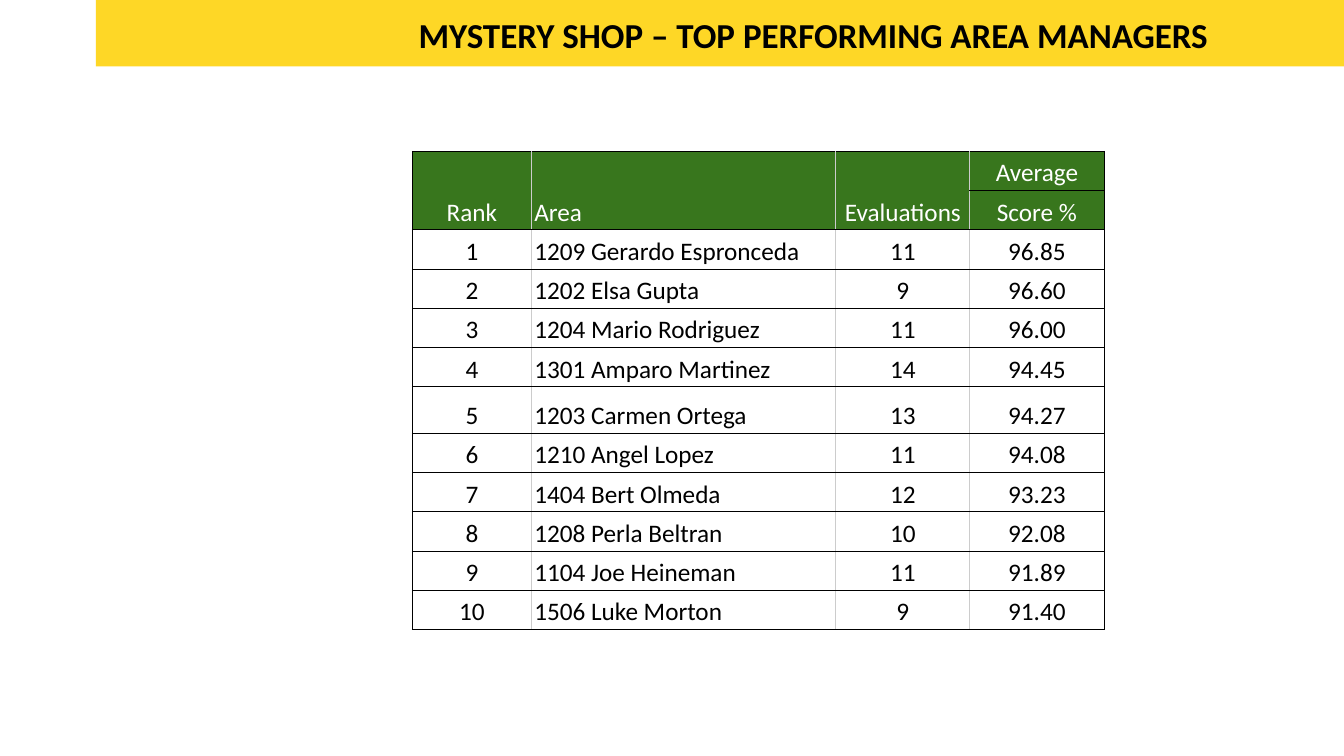
from lxml import etree
from pptx import Presentation, util as u
from pptx.dml.color import RGBColor
from pptx.enum import shapes, text
from pptx.oxml.ns import qn

# Content
TITLE = "MYSTERY SHOP – TOP PERFORMING AREA MANAGERS"
ROWS = [
    ("Rank", "Area", "Evaluations", "Average"),
    ("", "", "", "Score %"),
    ("1", "1209 Gerardo Espronceda", "11", "96.85"),
    ("2", "1202 Elsa Gupta", "9", "96.60"),
    ("3", "1204 Mario Rodriguez", "11", "96.00"),
    ("4", "1301 Amparo Martinez", "14", "94.45"),
    ("5", "1203 Carmen Ortega", "13", "94.27"),
    ("6", "1210 Angel Lopez", "11", "94.08"),
    ("7", "1404 Bert Olmeda", "12", "93.23"),
    ("8", "1208 Perla Beltran", "10", "92.08"),
    ("9", "1104 Joe Heineman", "11", "91.89"),
    ("10", "1506 Luke Morton", "9", "91.40"),
]
COLORS = {"band": "FED726", "header": "38761D", "body": "FFFFFF",
          "light": "FFFFFF", "dark": "000000", "grid": "CCCCCC"}
FONT = "Calibri"
HEADER_ROWS = 2
AREA_COL = 1
COL_WIDTHS = [1.18, 3.02, 1.33, 1.33]
ROW_H, TALL_ROW, TALL_ROW_H = 0.39, 6, 0.46
TABLE_LEFT, TABLE_TOP = 4.09, 1.5


def rgb(name):
    return RGBColor.from_string(COLORS[name])


def style(p, size, color, align, spacing, bold=False):
    p.alignment, p.line_spacing = align, spacing
    p.font.name, p.font.size, p.font.bold = FONT, u.Pt(size), bold
    p.font.color.rgb = rgb(color)


def set_borders(cell, **sides):
    """Put the lines ahead of the fill, as the schema requires."""
    tc_pr = cell._tc.get_or_add_tcPr()
    for i, (side, color) in enumerate(sides.items()):
        ln = etree.Element(qn(f"a:ln{side}"), w=str(u.Pt(0.75)))
        fill = etree.SubElement(ln, qn("a:solidFill"))
        etree.SubElement(fill, qn("a:srgbClr"), val=COLORS[color])
        tc_pr.insert(i, ln)


prs = Presentation()
prs.slide_width, prs.slide_height = u.Inches(13.33), u.Inches(7.5)
slide = prs.slides.add_slide(prs.slide_layouts[6])

# Title band
band = slide.shapes.add_shape(shapes.MSO_SHAPE.RECTANGLE, u.Inches(0.95), 0,
                              u.Inches(12.38), u.Inches(0.66))
band.shadow.inherit = False
band.fill.solid()
band.fill.fore_color.rgb = rgb("band")
band.line.fill.background()

# Title
tf = slide.shapes.add_textbox(u.Inches(2.62), u.Inches(0.13),
                              u.Inches(10.89), u.Inches(0.48)).text_frame
tf.word_wrap = True
p = tf.paragraphs[0]
p.text = TITLE
style(p, 25, "dark", text.PP_ALIGN.CENTER, 0.9, bold=True)

# Ranking table
heights = [TALL_ROW_H if r == TALL_ROW else ROW_H for r in range(len(ROWS))]
table = slide.shapes.add_table(
    len(ROWS), len(COL_WIDTHS), u.Inches(TABLE_LEFT), u.Inches(TABLE_TOP),
    u.Inches(sum(COL_WIDTHS)), u.Inches(sum(heights))).table
table.first_row = table.horz_banding = False
for col, width in zip(table.columns, COL_WIDTHS):
    col.width = u.Inches(width)
for row, height in zip(table.rows, heights):
    row.height = u.Inches(height)

last = len(COL_WIDTHS) - 1
for r, values in enumerate(ROWS):
    is_header = r < HEADER_ROWS
    for c, value in enumerate(values):
        cell = table.cell(r, c)
        cell.margin_left = cell.margin_right = u.Inches(0.03)
        cell.margin_top = cell.margin_bottom = u.Inches(0.02)
        cell.vertical_anchor = text.MSO_ANCHOR.BOTTOM
        cell.fill.solid()
        cell.fill.fore_color.rgb = rgb("header" if is_header else "body")
        set_borders(cell, L="grid" if c else "dark",
                    R="grid" if c < last else "dark", T="dark", B="dark")
        p = cell.text_frame.paragraphs[0]
        p.text = value
        align = text.PP_ALIGN.LEFT if c == AREA_COL else text.PP_ALIGN.CENTER
        style(p, 18, "light" if is_header else "dark", align, 1.15)

# Headings that span both header rows
for c in range(last):
    table.cell(0, c).merge(table.cell(HEADER_ROWS - 1, c))

prs.save("out.pptx")
